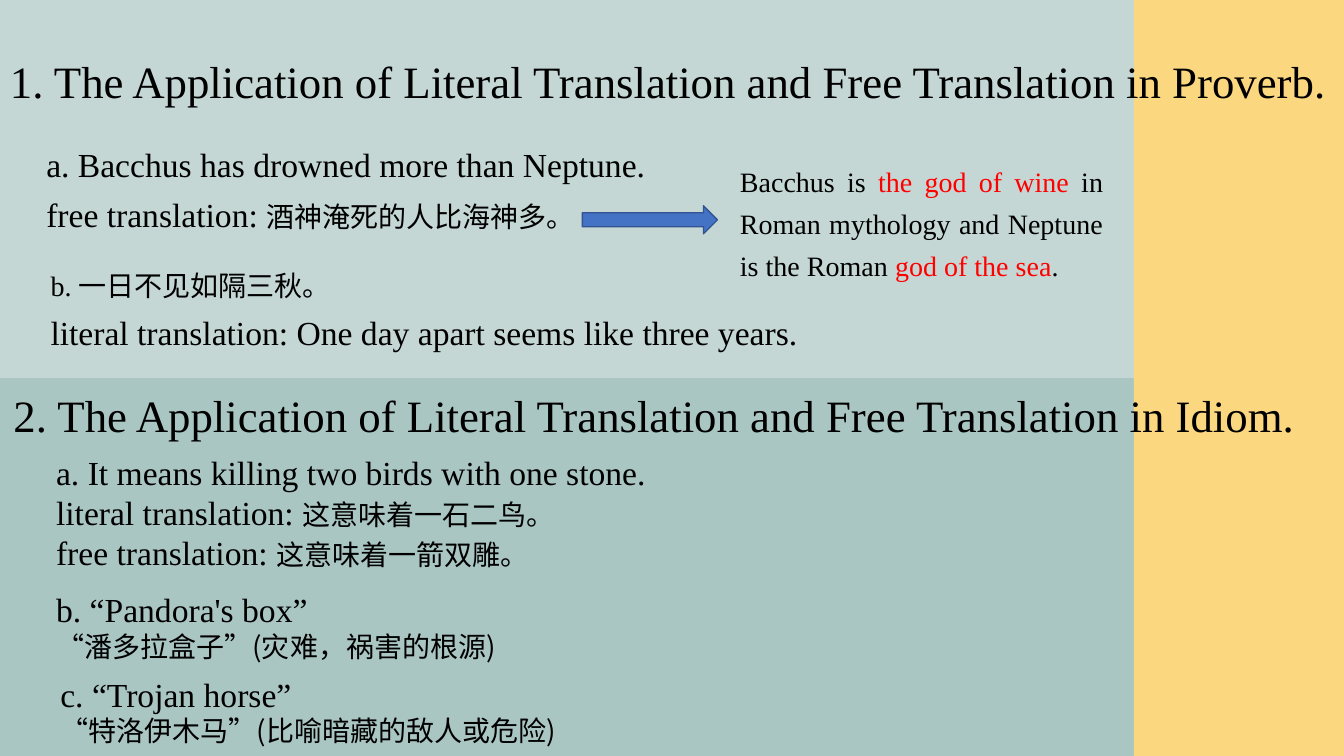
import itertools
from dataclasses import dataclass

import lxml.etree
import pptx
import pptx.dml.color
import pptx.enum.shapes
import pptx.enum.text
import pptx.oxml.ns
import pptx.util

LATIN = "Times New Roman"
CHINESE = "Noto Sans CJK SC"
BLACK = "000000"
RED = "FF0000"
TILE = 270
RECTANGLE = pptx.enum.shapes.MSO_SHAPE.RECTANGLE
RIGHT_ARROW = pptx.enum.shapes.MSO_SHAPE.RIGHT_ARROW


@dataclass(frozen=True)
class Box:
    left: float
    top: float
    width: float
    height: float

    def lengths(self) -> list[pptx.util.Length]:
        return [pptx.util.Pt(v) for v in (self.left, self.top, self.width, self.height)]


@dataclass(frozen=True)
class Phrase:
    text: str
    size: float = 24
    font: str = LATIN
    color: str = BLACK


@dataclass(frozen=True)
class Passage:
    box: Box
    lines: list[list[Phrase]]
    spacing: float = 1.0
    justified: bool = False


def rgb(value: str) -> pptx.dml.color.RGBColor:
    return pptx.dml.color.RGBColor.from_string(value)


def chinese(text: str) -> Phrase:
    return Phrase(text, 20, CHINESE)


def heading(top: float, left: float, text: str) -> Passage:
    return Passage(Box(left, top, 998, 46), [[Phrase(text, 32)]])


def draw_block(slide, kind, box: Box, fill: str, outline: str | None = None) -> None:
    block = slide.shapes.add_shape(kind, *box.lengths())
    block.shadow.inherit = False
    block.fill.solid()
    block.fill.fore_color.rgb = rgb(fill)
    if outline:
        block.line.color.rgb = rgb(outline)
        block.line.width = pptx.util.Pt(1)
    else:
        block.line.fill.background()


def add_phrase(paragraph, phrase: Phrase) -> None:
    run = paragraph.add_run()
    run.text = phrase.text
    run.font.size = pptx.util.Pt(phrase.size)
    run.font.color.rgb = rgb(phrase.color)
    run.font.name = phrase.font
    east_asian = lxml.etree.SubElement(
        run._r.get_or_add_rPr(), pptx.oxml.ns.qn("a:ea"))
    east_asian.set("typeface", CHINESE)


def draw_passage(slide, passage: Passage) -> None:
    frame = slide.shapes.add_textbox(*passage.box.lengths()).text_frame
    frame.word_wrap = True
    frame.auto_size = pptx.enum.text.MSO_AUTO_SIZE.SHAPE_TO_FIT_TEXT
    for index, line in enumerate(passage.lines):
        paragraph = frame.add_paragraph() if index else frame.paragraphs[0]
        paragraph.line_spacing = passage.spacing
        if passage.justified:
            paragraph.alignment = pptx.enum.text.PP_ALIGN.JUSTIFY
        for phrase in line:
            add_phrase(paragraph, phrase)


PASSAGES = [
    heading(34.5, 0, "1. The Application of Literal Translation and Free Translation in Proverb."),
    Passage(Box(26, 92, 446, 109), [
        [Phrase("a. Bacchus has drowned more than Neptune.")],
        [Phrase("free translation: "), chinese("酒神淹死的人比海神多。")],
    ], spacing=1.25),
    Passage(Box(521.5, 108, 273.5, 98), [[
        Phrase("Bacchus is ", 20),
        Phrase("the god of wine ", 20, color=RED),
        Phrase("in Roman mythology and Neptune is the Roman ", 20),
        Phrase("god of the sea", 20, color=RED),
        Phrase(".", 20),
    ]], spacing=1.25, justified=True),
    Passage(Box(29, 182, 622, 110), [
        [Phrase("b. ", 20), chinese("一日不见如隔三秋。")],
        [Phrase("literal translation: One day apart seems like three years.")],
    ], spacing=1.25),
    heading(273.5, 2.5, "2. The Application of Literal Translation and Free Translation in Idiom."),
    Passage(Box(33, 319, 623.5, 149), [
        [Phrase("a. It means killing two birds with one stone.")],
        [Phrase("literal translation: "), chinese("这意味着一石二鸟。")],
        [Phrase("free translation: "), chinese("这意味着一箭双雕。")],
    ]),
    Passage(Box(33, 417, 394, 60.5), [
        [Phrase("b. “Pandora's box”")],
        [chinese("“潘多拉盒子”(灾难，祸害的根源)")],
    ]),
    Passage(Box(36, 477.5, 436, 60.5), [
        [Phrase("c. “Trojan horse”")],
        [chinese("“特洛伊木马”(比喻暗藏的敌人或危险)")],
    ]),
]


def main() -> None:
    deck = pptx.Presentation()
    deck.slide_width = pptx.util.Pt(960)
    deck.slide_height = pptx.util.Pt(540)
    slide = deck.slides.add_slide(deck.slide_layouts[6])
    for (row, fill), column in itertools.product(enumerate(("C4D7D5", "AAC6C3")), range(3)):
        draw_block(slide, RECTANGLE, Box(column * TILE, row * TILE, TILE, TILE), fill)
    draw_block(slide, RECTANGLE, Box(3 * TILE, 0, 150, 2 * TILE), "FBD77F")
    for passage in PASSAGES:
        draw_passage(slide, passage)
    draw_block(slide, RIGHT_ARROW, Box(416, 147, 96.5, 20), "4472C4", "325491")
    deck.save("out.pptx")


if __name__ == "__main__":
    main()
